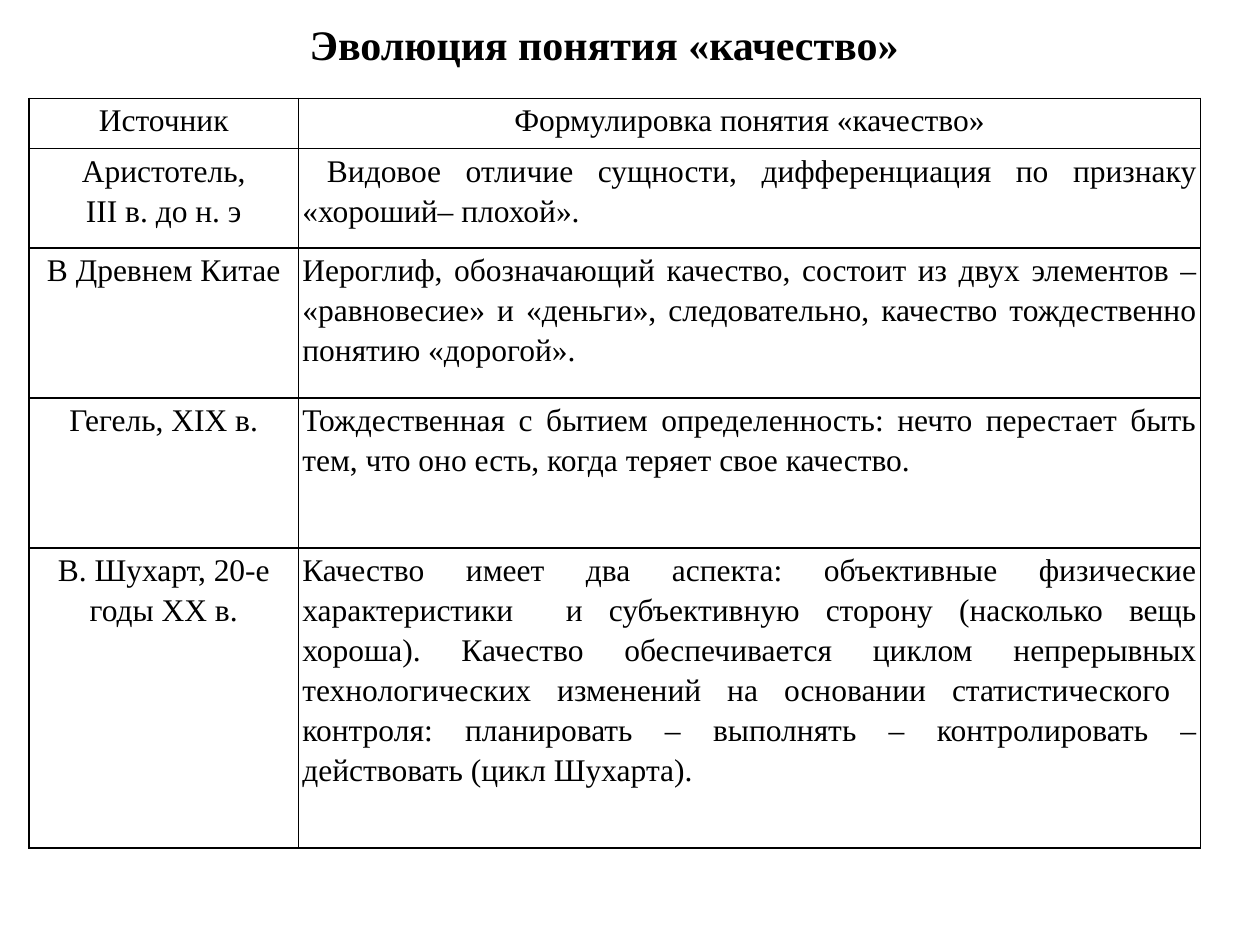
from lxml import etree
from pptx import Presentation
from pptx.dml.color import RGBColor
from pptx.enum.text import MSO_ANCHOR, PP_ALIGN
from pptx.oxml.ns import qn
from pptx.util import Inches, Pt

BLACK = RGBColor(0x00, 0x00, 0x00)
CENTER, JUSTIFY = PP_ALIGN.CENTER, PP_ALIGN.JUSTIFY
MIDDLE = MSO_ANCHOR.MIDDLE
FONT = "Times New Roman"
COLUMNS = (2.14, 7.16)
ROW_HEIGHTS = (0.4, 0.79, 1.19, 1.19, 2.38)
ROWS = (
    ("Источник", "Формулировка понятия «качество»"),
    ("Аристотель,\n III в. до н. э ",
     " Видовое отличие сущности, дифференциация по признаку «хороший– плохой»."),
    ("В Древнем Китае",
     "Иероглиф, обозначающий качество, состоит из двух элементов – «равновесие» "
     "и «деньги», следовательно, качество тождественно понятию «дорогой»."),
    ("Гегель, XIX в.",
     "Тождественная с бытием определенность: нечто перестает быть тем, что оно "
     "есть, когда теряет свое качество."),
    ("В. Шухарт, 20-е годы XX в.",
     "Качество имеет два аспекта: объективные физические характеристики  и "
     "субъективную сторону (насколько вещь хороша). Качество обеспечивается "
     "циклом непрерывных технологических изменений на основании "
     "статистического  контроля: планировать – выполнять – контролировать – "
     "действовать (цикл Шухарта)."),
)


def format_text(tf, align, size, bold=False, spacing=None):
    """Apply one paragraph and run style to a whole text frame."""
    for p in tf.paragraphs:
        p.alignment = align
        p.line_spacing = spacing
        for r in p.runs:
            r.font.name = FONT
            r.font.size = Pt(size)
            r.font.bold = bold
            r.font.color.rgb = BLACK


def set_borders(cell):
    """Draw a thin black line on every side of a cell."""
    tcPr = cell._tc.get_or_add_tcPr()
    for i, side in enumerate(("a:lnL", "a:lnR", "a:lnT", "a:lnB")):
        ln = etree.Element(qn(side), w=str(Pt(1)))
        fill = etree.SubElement(ln, qn("a:solidFill"))
        etree.SubElement(fill, qn("a:srgbClr"), val=str(BLACK))
        tcPr.insert(i, ln)


def add_title(slide, left, top, width, height):
    """Place the slide heading in the given box."""
    tf = slide.shapes.add_textbox(left, top, width, height).text_frame
    tf.word_wrap = True
    tf.vertical_anchor = MIDDLE
    tf.text = "Эволюция понятия «качество»"
    format_text(tf, CENTER, 24, bold=True)


def add_definitions(slide, left, top, width, height):
    """Place the table of sources and definitions in the given box."""
    table = slide.shapes.add_table(
        len(ROWS), len(COLUMNS), left, top, width, height).table
    table.first_row = table.horz_banding = False
    for column, w in zip(table.columns, COLUMNS):
        column.width = Inches(w)
    for i, (texts, h) in enumerate(zip(ROWS, ROW_HEIGHTS)):
        table.rows[i].height = Inches(h)
        for j, text in enumerate(texts):
            cell = table.cell(i, j)
            cell.margin_left = cell.margin_right = Inches(0.03)
            cell.margin_top = cell.margin_bottom = 0
            cell.fill.background()
            set_borders(cell)
            cell.text_frame.text = text
            align = JUSTIFY if i and j else CENTER
            format_text(cell.text_frame, align, 18, spacing=1.15)


def main():
    """Build and save the slide."""
    prs = Presentation()
    prs.slide_width, prs.slide_height = Inches(10), Inches(7.5)
    slide = prs.slides.add_slide(prs.slide_layouts[6])
    add_definitions(slide, Inches(0.23), Inches(0.78),
                    Inches(sum(COLUMNS)), Inches(sum(ROW_HEIGHTS)))
    add_title(slide, Inches(0.73), Inches(0.08), Inches(8.13), Inches(0.54))
    prs.save("out.pptx")


if __name__ == "__main__":
    main()
